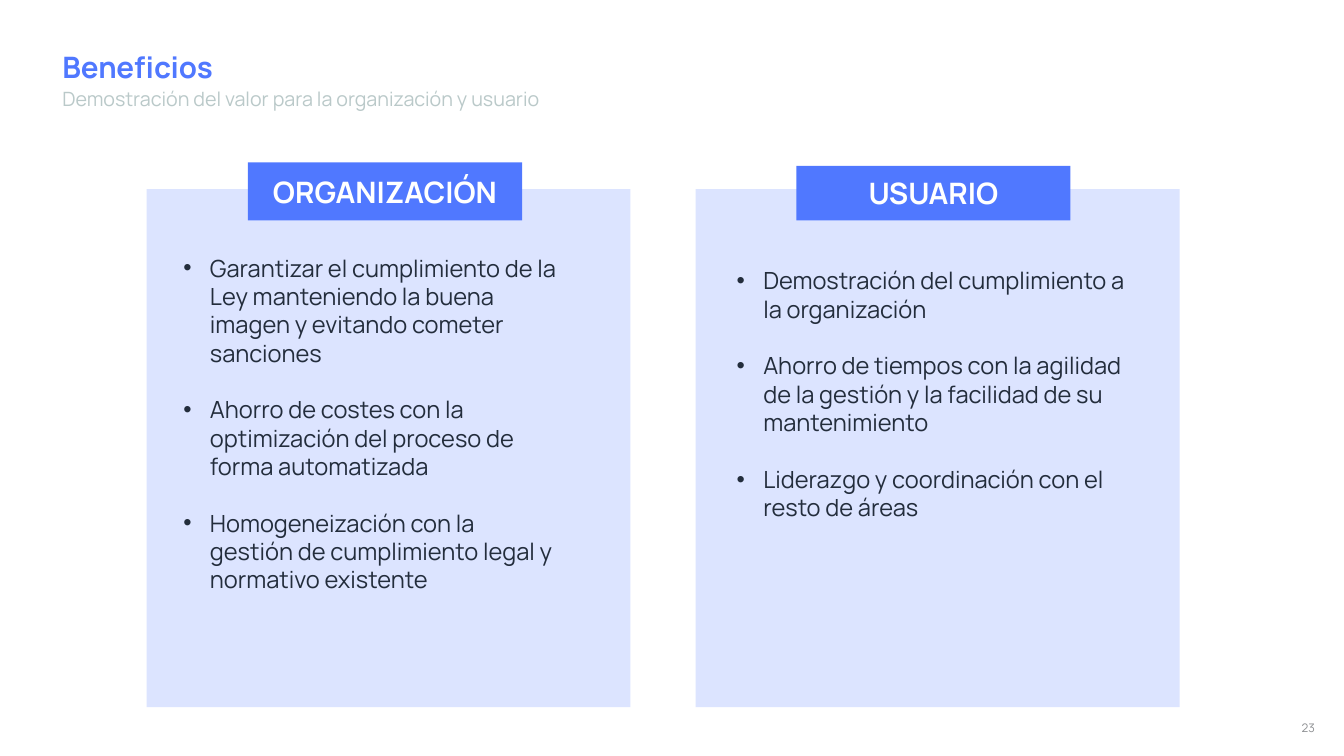
"""Build the slide on benefits for the organisation and the user."""
import pptx
import pptx.util
import pptx.dml.color
import pptx.enum.shapes
import pptx.enum.text
import lxml.etree

Pt = pptx.util.Pt
ALIGN = pptx.enum.text.PP_ALIGN
BLUE, PALE, INK, WHITE = "5078FF", "DCE4FF", "232D3C", "FFFFFF"

deck = pptx.Presentation()
deck.slide_width, deck.slide_height = Pt(1365.84), Pt(768.24)
slide = deck.slides.add_slide(deck.slide_layouts[6])


def write(para, text, size, color, bold=False):
    run = para.add_run()
    run.text = text
    font = run.font
    font.name, font.size, font.bold = "Manrope", Pt(size), bold
    font.color.rgb = pptx.dml.color.RGBColor.from_string(color)


def block(left, top, width, height, color):
    rect = pptx.enum.shapes.MSO_SHAPE.RECTANGLE
    shape = slide.shapes.add_shape(rect, Pt(left), Pt(top), Pt(width), Pt(height))
    shape.shadow.inherit = False
    shape.fill.solid()
    shape.fill.fore_color.rgb = pptx.dml.color.RGBColor.from_string(color)
    shape.line.fill.background()
    return shape


labels = [
    ("23", 1283.76, 732.24, 52.56, 12.24, 12, "8D8F92", False, ALIGN.RIGHT),
    ("Beneficios", 63.36, 49.68, 620, 36, 30, BLUE, True, ALIGN.LEFT),
    ("Demostración del valor para la organización y usuario",
     63.36, 88.56, 620, 24.48, 20, "BAC9C9", False, ALIGN.LEFT),
]
for text, left, top, width, height, size, color, bold, align in labels:
    box = slide.shapes.add_textbox(Pt(left), Pt(top), Pt(width), Pt(height))
    frame = box.text_frame
    frame.word_wrap = True
    frame.margin_left = frame.margin_right = 0
    frame.margin_top = frame.margin_bottom = 0
    frame.paragraphs[0].alignment = align
    write(frame.paragraphs[0], text, size, color, bold)

panels = [
    ("ORGANIZACIÓN", 149.04, (252, 164.88, 278.64, 59.04),
     (179.28, 254.16, 393.84, 414.72), [
        "Garantizar el cumplimiento de la Ley manteniendo la buena imagen "
        "y evitando cometer sanciones",
        "Ahorro de costes con la optimización del proceso de forma automatizada",
        "Homogeneización con la gestión de cumplimiento legal y normativo existente",
    ]),
    ("USUARIO", 707.04, (809.28, 168.48, 278.64, 55.44),
     (741.6, 267.12, 414, 356.4), [
        "Demostración del cumplimiento a la organización",
        "Ahorro de tiempos con la agilidad de la gestión y la facilidad "
        "de su mantenimiento",
        "Liderazgo y coordinación con el resto de áreas",
    ]),
]
for title, left, tab, area, items in panels:
    block(left, 192.24, 491.76, 526.32, PALE)

    frame = block(*tab, BLUE).text_frame
    frame.word_wrap = True
    frame.vertical_anchor = pptx.enum.text.MSO_ANCHOR.MIDDLE
    frame.paragraphs[0].alignment = ALIGN.CENTER
    write(frame.paragraphs[0], title, 30, WHITE, True)

    frame = slide.shapes.add_textbox(*map(Pt, area)).text_frame
    frame.word_wrap = True
    for index, item in enumerate(items):
        para = frame.add_paragraph() if index else frame.paragraphs[0]
        props = para._p.get_or_add_pPr()
        props.set("marL", str(Pt(27)))
        props.set("indent", str(Pt(-27)))
        for tag, key, value in (("a:buFont", "typeface", "Arial"),
                                ("a:buChar", "char", "•")):
            mark = lxml.etree.SubElement(props, pptx.oxml.ns.qn(tag))
            mark.set(key, value)
        if index:
            para.space_before = Pt(28.8)
        write(para, item, 24, INK)

deck.save("out.pptx")
